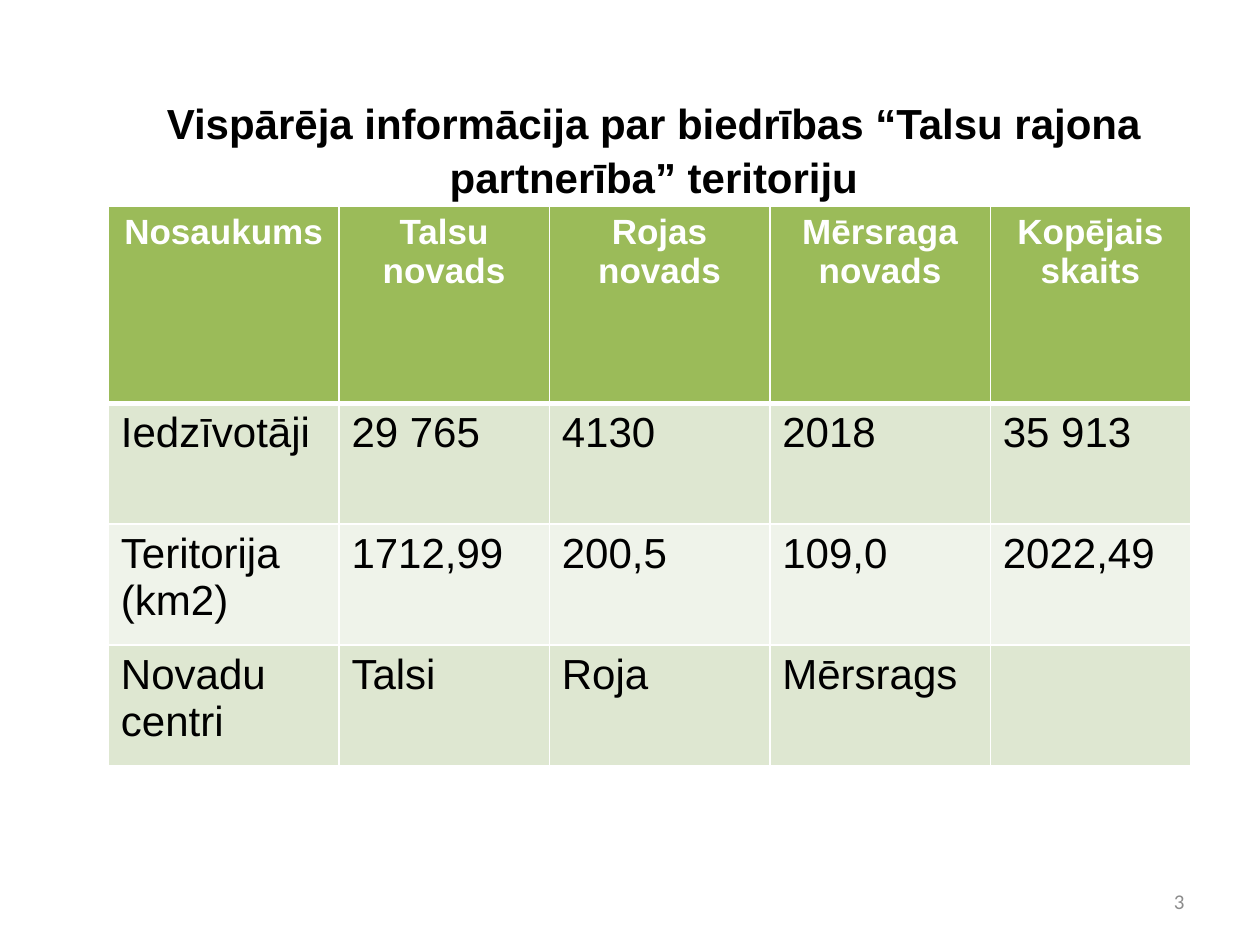
"""Build the slide with the overview table of the partnership's territory."""
from lxml import etree
from pptx import Presentation
from pptx.dml.color import RGBColor
from pptx.enum.text import MSO_ANCHOR, PP_ALIGN
from pptx.oxml.ns import qn
from pptx.util import Inches, Pt

LEFT, MID, RIGHT = PP_ALIGN.LEFT, PP_ALIGN.CENTER, PP_ALIGN.RIGHT
TOP, CENTER = MSO_ANCHOR.TOP, MSO_ANCHOR.MIDDLE
BLACK = RGBColor(0x00, 0x00, 0x00)
WHITE = RGBColor(0xFF, 0xFF, 0xFF)
GRAY = RGBColor(0x8C, 0x8C, 0x8C)
GREEN = RGBColor(0x9B, 0xBB, 0x59)
BANDS = [RGBColor(0xDE, 0xE7, 0xD1), RGBColor(0xEF, 0xF3, 0xEA)]

TITLE = "Vispārēja informācija par biedrības “Talsu rajona partnerība” teritoriju"
NUMBER = "3"
ROWS = [
    ["Nosaukums", "Talsu novads", "Rojas novads", "Mērsraga novads", "Kopējais skaits"],
    ["Iedzīvotāji", "29 765", "4130", "2018", "35 913"],
    ["Teritorija (km2)", "1712,99", "200,5", "109,0", "2022,49"],
    ["Novadu centri", "Talsi", "Roja", "Mērsrags", ""],
]
WIDTHS = [1.83, 1.67, 1.75, 1.75, 1.59]
HEIGHTS = [1.56, 0.96, 0.96, 0.96]


def write(frame, text, size, color, align=LEFT, bold=False, font="Arial"):
    para = frame.paragraphs[0]
    para.alignment = align
    if not text:
        return para
    run = para.add_run()
    run.text = text
    run.font.name = font
    run.font.size = Pt(size)
    run.font.bold = bold
    run.font.color.rgb = color
    return para


def add_box(slide, area, anchor):
    frame = slide.shapes.add_textbox(*map(Inches, area)).text_frame
    frame.word_wrap = True
    frame.vertical_anchor = anchor
    return frame


def set_edges(cell, sides):
    props = cell._tc.get_or_add_tcPr()
    for spot, (side, width) in enumerate(sides.items()):
        line = etree.Element(qn("a:" + side), w=str(Pt(width)))
        fill = etree.SubElement(line, qn("a:solidFill"))
        etree.SubElement(fill, qn("a:srgbClr"), val=str(WHITE))
        props.insert(spot, line)


def add_grid(slide):
    area = (0.86, 1.64, sum(WIDTHS), sum(HEIGHTS))
    table = slide.shapes.add_table(len(ROWS), len(WIDTHS), *map(Inches, area)).table
    for col, width in zip(table.columns, WIDTHS):
        col.width = Inches(width)
    for row, height in zip(table.rows, HEIGHTS):
        row.height = Inches(height)
    for r, texts in enumerate(ROWS):
        head = r == 0
        for c, text in enumerate(texts):
            cell = table.cell(r, c)
            cell.fill.solid()
            cell.fill.fore_color.rgb = GREEN if head else BANDS[(r - 1) % 2]
            set_edges(cell, {"lnL": 1, "lnR": 1, "lnT": 3 if r == 1 else 1,
                             "lnB": 3 if head else 1})
            if head:
                write(cell.text_frame, text, 20, WHITE, MID, True)
            else:
                write(cell.text_frame, text, 24, BLACK)


def main():
    deck = Presentation()
    deck.slide_width, deck.slide_height = Inches(10), Inches(7.5)
    slide = deck.slides.add_slide(deck.slide_layouts[6])
    page = add_box(slide, (7.17, 6.95, 2.33, 0.4), CENTER)
    write(page, NUMBER, 12, GRAY, RIGHT, font="Calibri")
    title = add_box(slide, (0.7, 0.7, 8.98, 5.45), TOP)
    write(title, TITLE, 24, BLACK, MID, True).line_spacing = 1.07
    add_grid(slide)
    deck.save("out.pptx")


if __name__ == "__main__":
    main()
